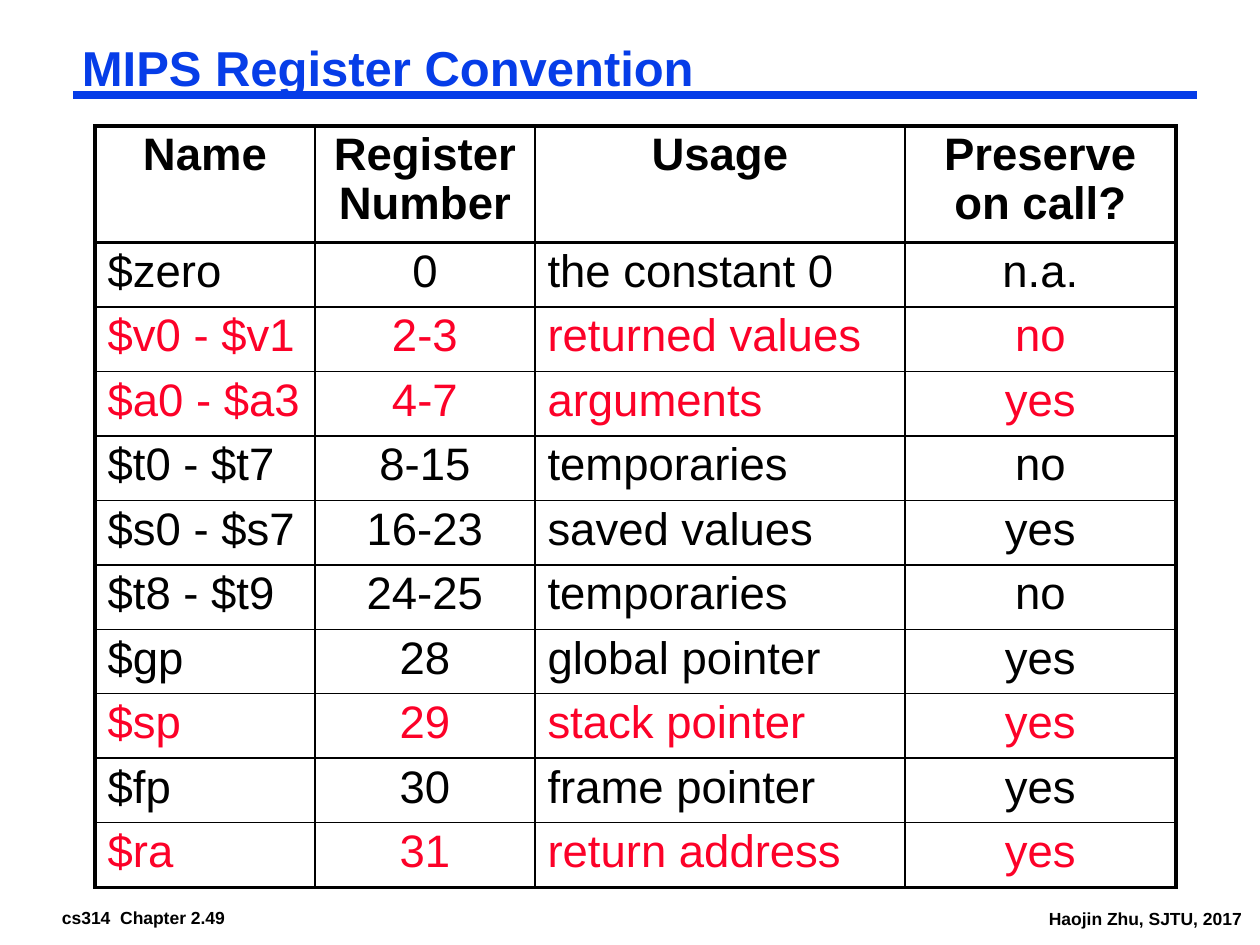
from lxml.etree import SubElement
from pptx import Presentation
from pptx.dml.color import RGBColor
from pptx.enum.shapes import MSO_CONNECTOR as Connector
from pptx.enum.text import MSO_ANCHOR as Anchor, MSO_AUTO_SIZE as AutoSize, PP_ALIGN as Align
from pptx.oxml.ns import qn
from pptx.util import Emu, Pt

SCALE = 914400 / 126
COLORS = {"text": "000000", "accent": "063DE8", "highlight": "FC0128"}
COLUMN_WIDTHS = [220, 220, 370, 271]
HEADER_HEIGHT = 116
TABLE_HEIGHT = 760
HEADER = ["Name", "Register Number", "Usage", "Preserve on call?"]
REGISTERS = [
    ["$zero", "0", "the constant 0", "n.a."],
    ["$v0 - $v1", "2-3", "returned values", "no"],
    ["$a0 - $a3", "4-7", "arguments", "yes"],
    ["$t0 - $t7", "8-15", "temporaries", "no"],
    ["$s0 - $s7", "16-23", "saved values", "yes"],
    ["$t8 - $t9", "24-25", "temporaries", "no"],
    ["$gp", "28", "global pointer", "yes"],
    ["$sp", "29", "stack pointer", "yes"],
    ["$fp", "30", "frame pointer", "yes"],
    ["$ra", "31", "return address", "yes"],
]
HIGHLIGHTED = {"$v0 - $v1", "$a0 - $a3", "$sp", "$ra"}


def px(length):
    return Emu(round(length * SCALE))


class SlideBuilder:
    font_name = "Arial"
    thin, thick = Pt(1), Pt(2.25)

    def __init__(self, slide):
        self.slide = slide

    def style(self, paragraph, size, color="text", bold=True, align=Align.LEFT, spacing=None):
        paragraph.alignment = align
        paragraph.line_spacing = spacing
        font = paragraph.font
        font.name, font.size, font.bold = self.font_name, Pt(size), bold
        font.color.rgb = RGBColor.from_string(COLORS[color])

    def frame(self, shape, text, wrap):
        frame = shape.text_frame
        frame.text = text
        frame.word_wrap = wrap
        frame.auto_size = AutoSize.SHAPE_TO_FIT_TEXT
        frame.vertical_anchor = Anchor.TOP
        frame.margin_left = frame.margin_right = px(9)
        frame.margin_top = frame.margin_bottom = px(4)
        return frame.paragraphs[0]

    def title(self, text, left, top, width, height):
        shape = self.slide.shapes.title
        shape.left, shape.top = px(left), px(top)
        shape.width, shape.height = px(width), px(height)
        self.style(self.frame(shape, text, True), 28, "accent", spacing=0.87)

    def footer(self, text, left, top, width, height):
        shape = self.slide.shapes.add_textbox(px(left), px(top), px(width), px(height))
        self.style(self.frame(shape, text, False), 10)

    def rule(self, left, right, y):
        line = self.slide.shapes.add_connector(Connector.STRAIGHT, px(left), px(y), px(right), px(y))
        line.line.color.rgb = RGBColor.from_string(COLORS["accent"])
        line.line.width = Pt(4.5)
        SubElement(line._element.spPr, qn("a:effectLst"))

    def borders(self, cell, thick_sides):
        properties = cell._tc.get_or_add_tcPr()
        for side in "LRTB":
            width = self.thick if side in thick_sides else self.thin
            border = SubElement(properties, qn(f"a:ln{side}"), w=str(width))
            fill = SubElement(border, qn("a:solidFill"))
            SubElement(fill, qn("a:srgbClr"), val=COLORS["text"])

    def table(self, rows, left, top):
        last_row, last_column = len(rows) - 1, len(COLUMN_WIDTHS) - 1
        row_height = (TABLE_HEIGHT - HEADER_HEIGHT) / last_row
        table = self.slide.shapes.add_table(
            len(rows), len(COLUMN_WIDTHS), px(left), px(top),
            px(sum(COLUMN_WIDTHS)), px(TABLE_HEIGHT)).table
        table.first_row = table.horz_banding = False
        for column, width in zip(table.columns, COLUMN_WIDTHS):
            column.width = px(width)
        for r, values in enumerate(rows):
            header = r == 0
            table.rows[r].height = px(HEADER_HEIGHT if header else row_height)
            color = "highlight" if values[0] in HIGHLIGHTED else "text"
            for c, value in enumerate(values):
                cell = table.cell(r, c)
                cell.text = value
                align = Align.CENTER if header or c % 2 else Align.LEFT
                self.style(cell.text_frame.paragraphs[0], 26, color, header, align, 0.95)
                edges = {"L": c == 0, "R": c == last_column,
                         "T": r <= 1, "B": r in (0, last_row)}
                self.borders(cell, {side for side, thick in edges.items() if thick})
                cell.fill.background()


def main():
    presentation = Presentation()
    presentation.slide_width, presentation.slide_height = px(1260), px(945)
    builder = SlideBuilder(presentation.slides.add_slide(presentation.slide_layouts[5]))
    builder.footer("cs314  Chapter 2.49", 53, 903, 184, 28)
    builder.footer("Haojin Zhu, SJTU, 2017", 1040, 904, 212, 49)
    builder.rule(73, 1197, 95)
    builder.title("MIPS Register Convention", 73, 42, 1124, 58)
    builder.table([HEADER] + REGISTERS, 95, 126)
    presentation.save("out.pptx")


if __name__ == "__main__":
    main()
